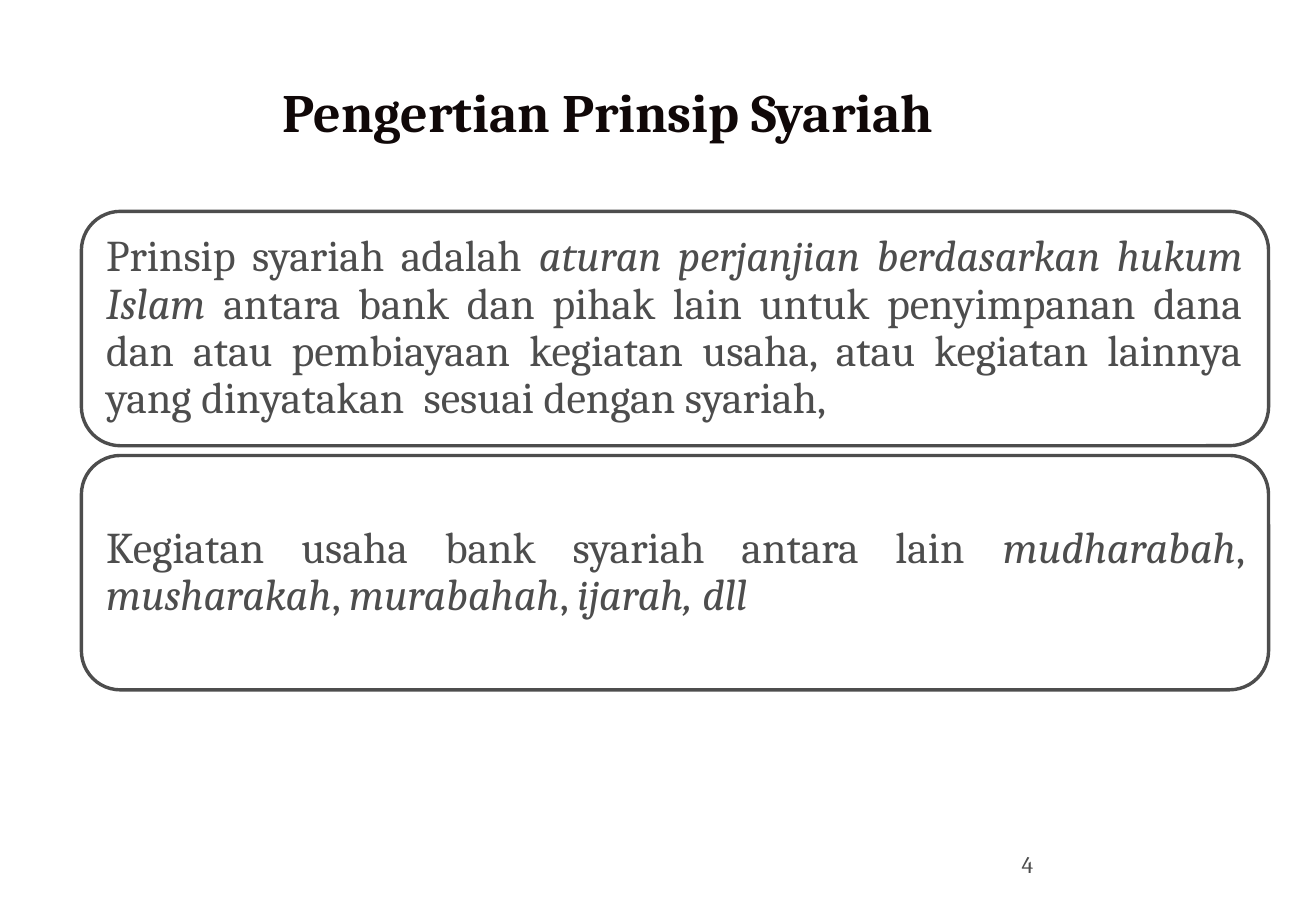
from pptx import Presentation
from pptx import util as u
from pptx.dml.color import RGBColor
from pptx.enum import shapes, text

PX = 9144
HUES = {"title": "100808", "ink": "4D4D4D", "paper": "FFFFFF"}
FONT = "Cambria"


def write(frame, words, size=26, hue="ink", bold=False, align=None, line=None):
    para = frame.paragraphs[0]
    para.alignment = align
    para.line_spacing = line
    for i, part in enumerate(words.split("*")):
        if part:
            run = para.add_run()
            run.text = part
            font = run.font
            font.name = FONT
            font.size = u.Pt(size)
            font.bold = bold
            font.italic = i % 2 == 1
            font.color.rgb = RGBColor.from_string(HUES[hue])


class Page:
    def __init__(self, deck):
        self.slide = deck.slides.add_slide(deck.slide_layouts[5])

    def place(self, *box):
        return [n * PX for n in box]

    def title(self, words, *box):
        head = self.slide.shapes.title
        head.left, head.top, head.width, head.height = self.place(*box)
        head.text_frame.vertical_anchor = text.MSO_ANCHOR.MIDDLE
        write(head.text_frame, words, size=32, hue="title", bold=True,
              align=text.PP_ALIGN.CENTER)

    def panel(self, words, *box):
        card = self.slide.shapes.add_shape(
            shapes.MSO_SHAPE.ROUNDED_RECTANGLE, *self.place(*box))
        card.shadow.inherit = False
        card.fill.solid()
        card.fill.fore_color.rgb = RGBColor.from_string(HUES["paper"])
        card.line.color.rgb = RGBColor.from_string(HUES["ink"])
        card.line.width = u.Pt(2)
        frame = card.text_frame
        frame.word_wrap = True
        frame.vertical_anchor = text.MSO_ANCHOR.MIDDLE
        frame.margin_left = frame.margin_right = 11 * PX
        frame.margin_top = frame.margin_bottom = 11 * PX
        write(frame, words, align=text.PP_ALIGN.JUSTIFY, line=0.9)

    def label(self, words, *box):
        note = self.slide.shapes.add_textbox(*self.place(*box))
        note.text_frame.word_wrap = True
        write(note.text_frame, words, size=14)


def main():
    deck = Presentation()
    deck.slide_width, deck.slide_height = 1083 * PX, 750 * PX
    page = Page(deck)
    page.title("Pengertian Prinsip Syariah", 92, 58, 817, 67)
    points = [
        "Prinsip syariah adalah *aturan perjanjian berdasarkan hukum Islam *"
        "antara bank dan pihak lain untuk penyimpanan dana dan atau "
        "pembiayaan kegiatan usaha, atau kegiatan lainnya yang dinyatakan  "
        "sesuai dengan syariah,",
        "Kegiatan usaha bank syariah antara lain *mudharabah*, "
        "*musharakah*, *murabahah*, *ijarah, dll*",
    ]
    for i, words in enumerate(points):
        page.panel(words, 67, 174 + 201 * i, 977, 193)
    page.label("4", 831, 695, 252, 40)
    deck.save("out.pptx")


if __name__ == "__main__":
    main()
